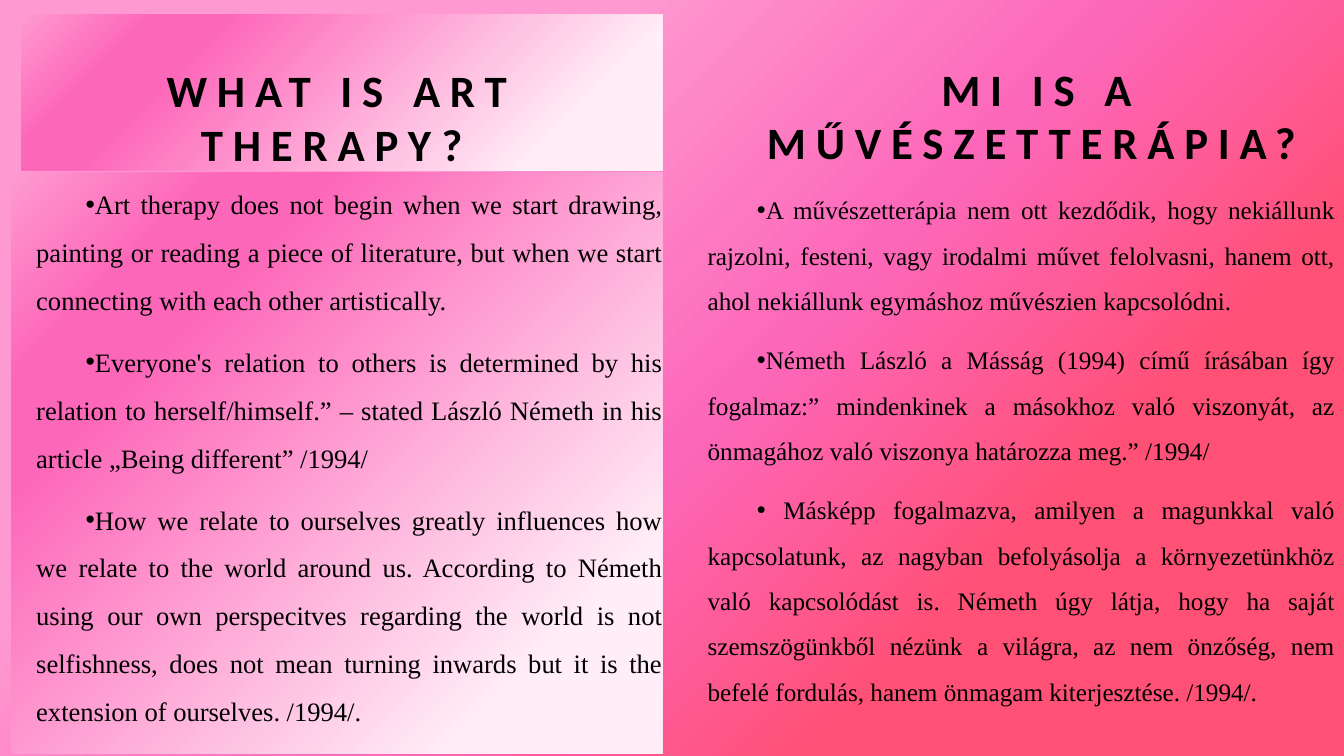
from lxml import etree
from pptx import Presentation
from pptx.dml.color import RGBColor
from pptx.enum.text import MSO_ANCHOR, PP_ALIGN
from pptx.oxml.ns import qn
from pptx.util import Inches, Pt

BLACK = RGBColor(0, 0, 0)
ROSE = RGBColor(0xFF, 0x50, 0x76)
PINK = RGBColor(0xFD, 0x67, 0xB9)
LIGHT = RGBColor(0xFE, 0x9A, 0xD1)
PALE = RGBColor(0xFF, 0xEE, 0xF7)
CENTER, JUSTIFY = PP_ALIGN.CENTER, PP_ALIGN.JUSTIFY
TOP, BOTTOM = MSO_ANCHOR.TOP, MSO_ANCHOR.BOTTOM

BACK = [(25, ROSE), (46, PINK), (71, LIGHT)]
PANEL = [(17, PALE), (74, PINK), (83, PINK), (100, LIGHT)]

ENGLISH = [
    "Art therapy does not begin when we start drawing, painting or reading a piece of literature, "
    "but when we start connecting with each other artistically. ",
    "Everyone's relation to others is determined by his relation to herself/himself.” – stated "
    "László Németh in his article „Being different” /1994/ ",
    "How we relate to ourselves greatly influences how we relate to the world around us. According "
    "to Németh using our own perspecitves regarding the world is not selfishness, does not mean "
    "turning inwards but it is the extension of ourselves. /1994/.",
]
MAGYAR = [
    "A művészetterápia nem ott kezdődik, hogy nekiállunk rajzolni, festeni, vagy irodalmi művet "
    "felolvasni, hanem ott, ahol nekiállunk egymáshoz művészien kapcsolódni. ",
    "Németh László a Másság (1994) című írásában így fogalmaz:” mindenkinek a másokhoz való "
    "viszonyát, az önmagához való viszonya határozza meg.” /1994/",
    " Másképp fogalmazva, amilyen a magunkkal való kapcsolatunk, az nagyban befolyásolja a "
    "környezetünkhöz való kapcsolódást is. Németh úgy látja, hogy ha saját szemszögünkből nézünk "
    "a világra, az nem önzőség, nem befelé fordulás, hanem önmagam kiterjesztése. /1994/.",
]
HEAD = {"name": "Calibri", "size": Pt(32), "bold": True}
LEFT = {"name": "Times New Roman", "size": Pt(19), "bold": False}
RIGHT = {**LEFT, "size": Pt(18)}

PARTS = [
    ((0.21, 0.14, 6.36, 1.55), ["WHAT IS ART THERAPY? "], HEAD, PANEL, BOTTOM),
    ((0.11, 1.71, 6.46, 5.77), ENGLISH, LEFT, PANEL, TOP),
    ((7.23, 0.56, 6.2, 1.18), ["MI IS A MŰVÉSZETTERÁPIA? "], HEAD, None, TOP),
    ((6.67, 1.73, 6.67, 5.38), MAGYAR, RIGHT, None, TOP),
]


def shade(fill, root, stops):
    """Fill with a round gradient that spreads from the lower right corner."""
    fill.solid()
    solid = next(root.iter(qn("a:solidFill")))
    grad = etree.Element(qn("a:gradFill"), rotWithShape="1")
    row = etree.SubElement(grad, qn("a:gsLst"))
    for pos, color in stops:
        stop = etree.SubElement(row, qn("a:gs"), pos=str(pos * 1000))
        etree.SubElement(stop, qn("a:srgbClr"), val=str(color))
    round_ = etree.SubElement(grad, qn("a:path"), {"path": "circle"})
    etree.SubElement(round_, qn("a:fillToRect"), l="100000", t="100000")
    solid.getparent().replace(solid, grad)


def bullet(para):
    """Add a bullet and a first line indent."""
    props = para._p.get_or_add_pPr()
    props.set("marL", str(Inches(0.25)))
    props.set("indent", str(Inches(0.49)))
    etree.SubElement(props, qn("a:buFont"), typeface="Arial")
    etree.SubElement(props, qn("a:buChar"), char="•")


def write(shape, lines, style, anchor):
    """Write the lines as a heading or as a bullet list."""
    frame = shape.text_frame
    frame.word_wrap = True
    frame.vertical_anchor = anchor
    for i, line in enumerate(lines):
        para = frame.paragraphs[0] if i == 0 else frame.add_paragraph()
        run = para.add_run()
        run.text = line
        if style is HEAD:
            para.alignment = CENTER
            run.font._element.set("spc", "700")
        else:
            para.alignment = JUSTIFY
            para.line_spacing = 1.5
            para.space_before = Pt(10 if i else 0)
            bullet(para)
        for key, value in style.items():
            setattr(run.font, key, value)
        run.font.color.rgb = BLACK


def main():
    """Build the two-language slide."""
    deck = Presentation()
    deck.slide_width, deck.slide_height = Inches(13.33), Inches(7.5)
    slide = deck.slides.add_slide(deck.slide_layouts[5])
    shade(slide.background.fill, slide.element, BACK)
    for i, (box, lines, style, stops, anchor) in enumerate(PARTS):
        spot = [Inches(n) for n in box]
        shape = slide.shapes.title if i == 0 else slide.shapes.add_textbox(*spot)
        shape.left, shape.top, shape.width, shape.height = spot
        if stops:
            shade(shape.fill, shape.element, stops)
            frame = shape.text_frame
            for side in ("left", "right", "top", "bottom"):
                setattr(frame, "margin_" + side, 0)
        write(shape, lines, style, anchor)
    deck.save("out.pptx")


if __name__ == "__main__":
    main()
